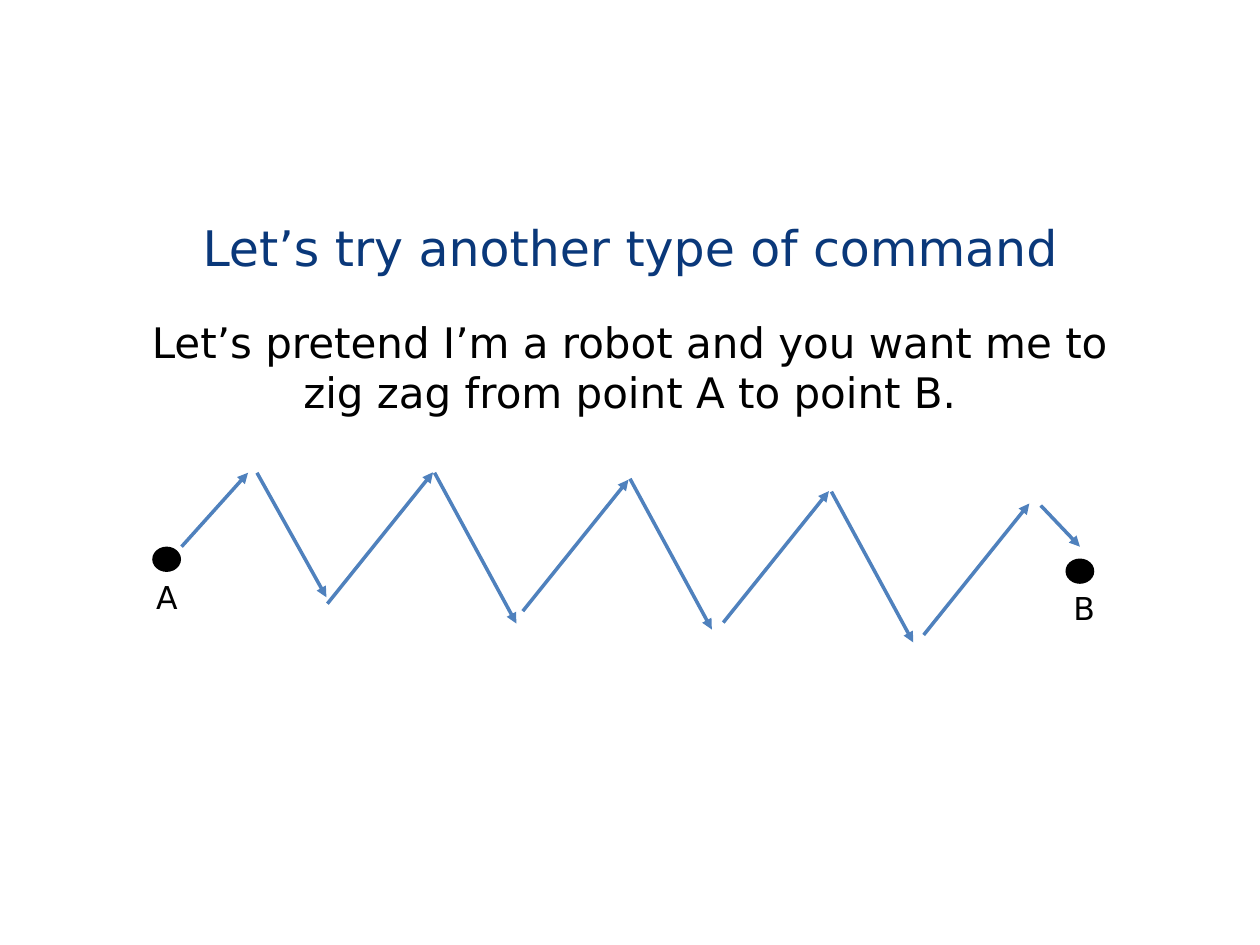
"""Build a slide that shows a robot's zigzag route from point A to point B."""
from lxml import etree
from pptx import Presentation
from pptx import util as u
from pptx.dml.color import RGBColor
from pptx.enum import shapes, text
from pptx.oxml.ns import qn

NAVY = RGBColor(0x0A, 0x38, 0x7A)
BLACK = RGBColor(0x00, 0x00, 0x00)
BLUE = RGBColor(0x4F, 0x81, 0xBD)

RISE = (2.13, -2.65)
FALL = (1.65, 3.04)
ROUTE = [
    ((3.66, 11.02), (1.34, -1.49)),
    ((5.18, 9.53), (1.4, 2.51)),
    ((6.6, 12.17), RISE),
    ((8.76, 9.53), FALL),
    ((10.54, 12.32), RISE),
    ((12.7, 9.65), FALL),
    ((14.58, 12.55), RISE),
    ((16.76, 9.91), FALL),
    ((18.62, 12.8), RISE),
    ((20.98, 10.19), (0.79, 0.83)),
]


class SlideBuilder:
    """Hold the style and the current slide, and draw each kind of element."""

    font = "DejaVu Sans"
    line_width = u.Pt(2)
    dot_size = (u.Cm(0.58), u.Cm(0.51))

    def __init__(self, slide):
        self.slide = slide

    def label(self, wording, left, top, width, height, size,
              color=BLACK, align=text.PP_ALIGN.LEFT):
        box = self.slide.shapes.add_textbox(
            u.Cm(left), u.Cm(top), u.Cm(width), u.Cm(height))
        frame = box.text_frame
        frame.word_wrap = True
        frame.auto_size = text.MSO_AUTO_SIZE.SHAPE_TO_FIT_TEXT
        paragraph = frame.paragraphs[0]
        paragraph.text = wording
        paragraph.alignment = align
        paragraph.font.name = self.font
        paragraph.font.size = u.Pt(size)
        paragraph.font.color.rgb = color

    def dot(self, left, top):
        shape = self.slide.shapes.add_shape(
            shapes.MSO_SHAPE.OVAL, u.Cm(left), u.Cm(top), *self.dot_size)
        shape.shadow.inherit = False
        shape.fill.solid()
        shape.fill.fore_color.rgb = BLACK
        shape.line.fill.background()

    def arrow(self, start, step):
        (x, y), (dx, dy) = start, step
        connector = self.slide.shapes.add_connector(
            shapes.MSO_CONNECTOR.STRAIGHT,
            u.Cm(x), u.Cm(y), u.Cm(x + dx), u.Cm(y + dy))
        connector.line.color.rgb = BLUE
        connector.line.width = self.line_width
        properties = connector._element.spPr
        etree.SubElement(properties.find(qn("a:ln")), qn("a:tailEnd"), type="triangle")
        etree.SubElement(properties, qn("a:effectLst"))


def main():
    presentation = Presentation()
    presentation.slide_width = u.Cm(25.4)
    presentation.slide_height = u.Cm(19.05)
    builder = SlideBuilder(presentation.slides.add_slide(presentation.slide_layouts[6]))

    center = text.PP_ALIGN.CENTER
    builder.label("Let’s try another type of command",
                  2.1, 4.27, 21.2, 1.45, 28, NAVY, center)
    builder.label("Let’s pretend I’m a robot and you want me to "
                  "zig zag from point A to point B.",
                  2.1, 6.25, 21.2, 2.31, 24, align=center)

    builder.dot(3.07, 11.02)
    builder.label("A", 2.9, 11.53, 2.13, 1.02, 18)
    builder.dot(21.48, 11.26)
    builder.label("B", 21.39, 11.74, 2.13, 1.02, 18)

    for start, step in ROUTE:
        builder.arrow(start, step)

    presentation.save("out.pptx")


if __name__ == "__main__":
    main()
